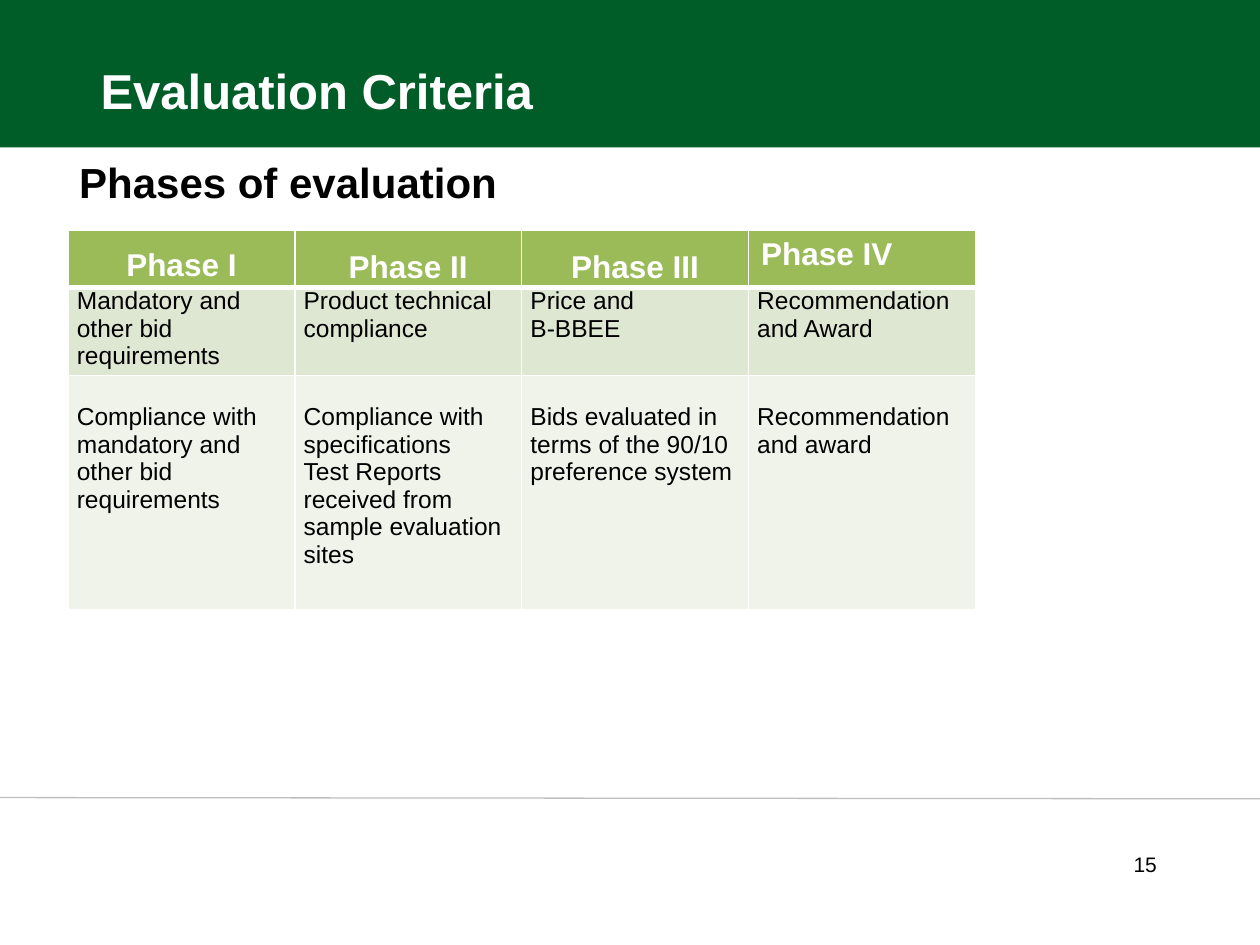
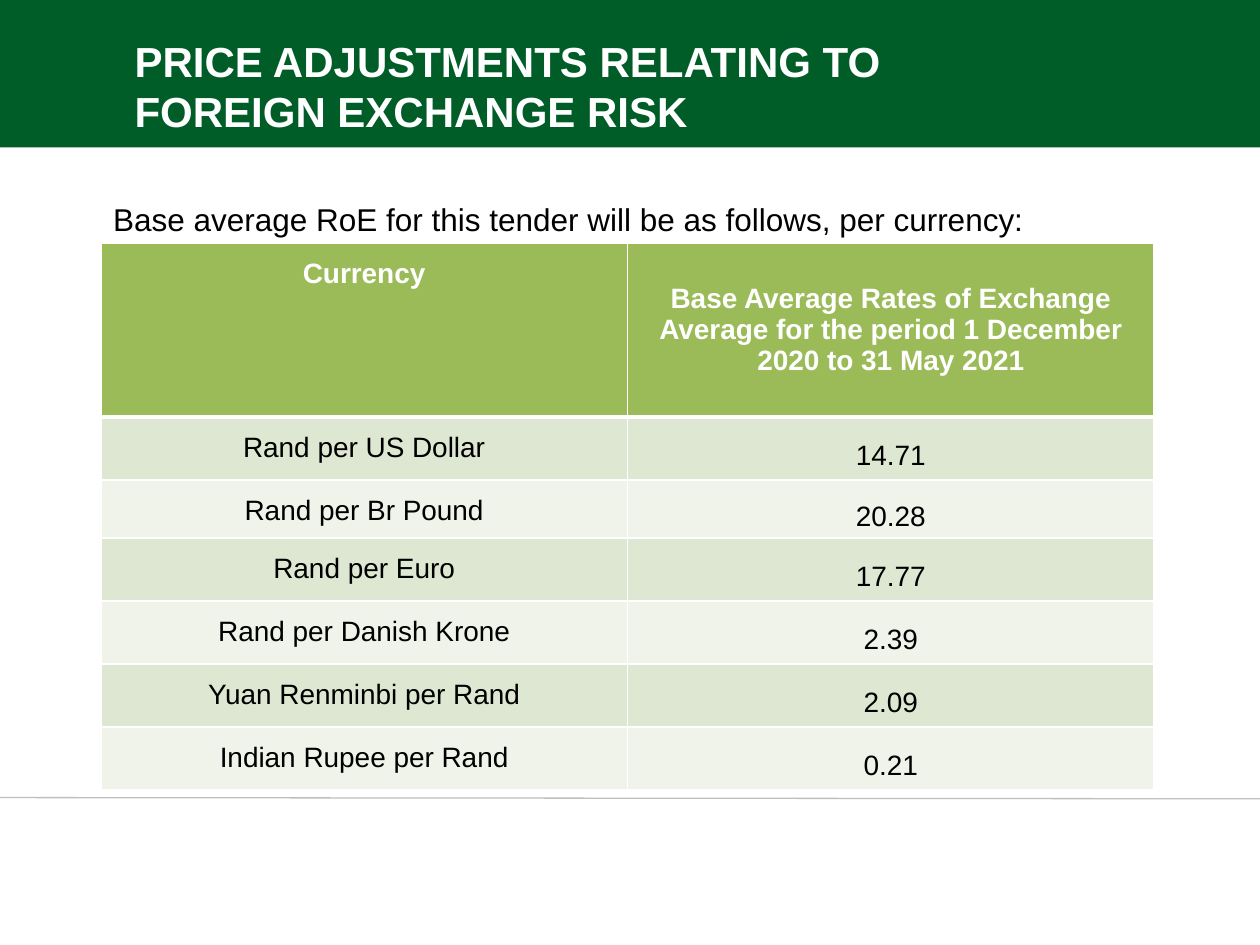
from lxml import etree
from pptx import Presentation
from pptx import util as u
from pptx.dml.color import RGBColor
from pptx.enum import shapes, text
from pptx.oxml import ns

GREEN, HEADER, WHITE, BLACK, GREY = "005D28", "9BBB59", "FFFFFF", "000000", "BFBFBF"
BANDS = ["DEE7D1", "EFF3EA"]
CENTER, RIGHT = text.PP_ALIGN.CENTER, text.PP_ALIGN.RIGHT
MIDDLE, BOTTOM = text.MSO_ANCHOR.MIDDLE, text.MSO_ANCHOR.BOTTOM
THIN, THICK = 1, 3


def color(value):
    return RGBColor.from_string(value)


def write(frame, content, size=18, fill=BLACK, bold=False, align=None,
          anchor=text.MSO_ANCHOR.TOP, spacing=None):
    """Fill a text frame, one paragraph for each line of the content."""
    frame.word_wrap = True
    frame.vertical_anchor = anchor
    for index, line in enumerate(content.split("\n")):
        paragraph = frame.paragraphs[0] if index == 0 else frame.add_paragraph()
        paragraph.alignment = align
        paragraph.line_spacing = spacing
        run = paragraph.add_run()
        run.text = line
        run.font.name = "Arial"
        run.font.size = u.Pt(size)
        run.font.bold = bold
        run.font.color.rgb = color(fill)


class Deck:
    """Holds the shared style and the slide being built."""

    def __init__(self):
        self.presentation = Presentation()
        self.presentation.slide_width = u.Inches(10)
        self.presentation.slide_height = u.Inches(7.5)
        self.slide = None

    def new_slide(self):
        self.slide = self.presentation.slides.add_slide(self.presentation.slide_layouts[6])
        # Title band
        band = self.slide.shapes.add_shape(shapes.MSO_SHAPE.RECTANGLE, 0, 0,
                                           u.Inches(10), u.Inches(1.17))
        band.shadow.inherit = False
        band.fill.solid()
        band.fill.fore_color.rgb = color(GREEN)
        band.line.fill.background()
        # Footer rule
        rule = self.slide.shapes.add_connector(shapes.MSO_CONNECTOR.STRAIGHT, 0, u.Inches(6.33),
                                               u.Inches(10), u.Inches(6.34))
        rule.line.color.rgb = color(GREY)
        rule.line.width = u.Pt(0.75)
        etree.SubElement(rule._element.spPr, ns.qn("a:effectLst"))

    def text_box(self, left, top, width, height, content, **style):
        box = self.slide.shapes.add_textbox(*map(u.Inches, (left, top, width, height)))
        write(box.text_frame, content, **style)

    def title(self, left, top, width, height, content, **style):
        self.text_box(left, top, width, height, content, fill=WHITE, bold=True, **style)

    def table(self, left, top, column_width, row_heights, rows, style_of):
        """style_of(row, column) gives the text format and optional margins of a cell."""
        columns = len(rows[0])
        frame = self.slide.shapes.add_table(
            len(rows), columns, u.Inches(left), u.Inches(top),
            u.Inches(column_width * columns), u.Inches(sum(row_heights)))
        table = frame.table
        table.horz_banding = False
        for column in table.columns:
            column.width = u.Inches(column_width)
        for row, values in enumerate(rows):
            table.rows[row].height = u.Inches(row_heights[row])
            for column, value in enumerate(values):
                self.cell(table.cell(row, column), row, value, **style_of(row, column))

    def cell(self, cell, row, value, side=0.07, upper=0, anchor=text.MSO_ANCHOR.TOP, **style):
        is_header = row == 0
        cell.margin_left = cell.margin_right = u.Inches(side)
        cell.margin_top, cell.margin_bottom = u.Inches(upper), 0
        cell.vertical_anchor = anchor
        self.borders(cell, top=THICK if row == 1 else THIN, bottom=THICK if is_header else THIN)
        cell.fill.solid()
        cell.fill.fore_color.rgb = color(HEADER if is_header else BANDS[(row - 1) % 2])
        write(cell.text_frame, value, fill=WHITE if is_header else BLACK, bold=is_header, **style)
        # The cell carries the anchor, so its text frame needs none
        cell.text_frame.vertical_anchor = None

    def borders(self, cell, top, bottom):
        properties = cell._tc.get_or_add_tcPr()
        for name, width in (("lnL", THIN), ("lnR", THIN), ("lnT", top), ("lnB", bottom)):
            line = etree.SubElement(properties, ns.qn(f"a:{name}"), w=str(u.Pt(width)))
            fill = etree.SubElement(line, ns.qn("a:solidFill"))
            etree.SubElement(fill, ns.qn("a:srgbClr"), val=WHITE)


def phase_style(row, column):
    if row == 0 and column == 3:
        return dict(size=18, side=0.1, upper=0.05)
    if row == 0:
        anchor = MIDDLE if column else text.MSO_ANCHOR.TOP
        return dict(size=18, align=CENTER, spacing=1.5, anchor=anchor)
    return dict(size=14, upper=0.22 if row == 2 else 0)


def rate_style(row, column):
    anchor = MIDDLE if column else text.MSO_ANCHOR.TOP
    spacing = None if (row, column) == (0, 1) else 1.5
    return dict(size=16, align=CENTER, anchor=anchor, spacing=spacing)


def evaluation_slide(deck):
    deck.new_slide()
    deck.title(0.7, 0, 6.08, 1, "Evaluation Criteria", size=28, anchor=BOTTOM)
    deck.text_box(0.53, 1.19, 8.99, 0.91, "Phases of evaluation", size=24, bold=True)
    phases = [
        ["Phase I", "Phase II", "Phase III", "Phase IV"],
        ["Mandatory and other bid requirements", "Product technical compliance",
         "Price and\nB-BBEE", "Recommendation and Award"],
        ["Compliance with mandatory and other bid requirements",
         "Compliance with specifications\nTest Reports received from sample evaluation sites",
         "Bids evaluated in terms of the 90/10 preference system",
         "Recommendation and award"],
    ]
    deck.table(0.54, 1.83, 1.8, [0.44, 0.7, 1.86], phases, phase_style)
    deck.text_box(4.08, 6.71, 5.2, 0.79, "15", size=12, align=RIGHT)


def exchange_slide(deck):
    deck.new_slide()
    deck.title(0.97, 0.23, 7, 0.91, "PRICE ADJUSTMENTS RELATING TO FOREIGN EXCHANGE RISK", size=24)
    deck.text_box(0.8, 1.54, 8.36, 1.18,
                  "Base average RoE for this tender will be as follows, per currency:")
    rates = [
        ["Currency", "Base Average Rates of Exchange\n"
                     "Average for the period 1 December 2020 to 31 May 2021"],
        ["Rand per US Dollar", "14.71"],
        ["Rand per Br Pound", "20.28"],
        ["Rand per Euro", "17.77"],
        ["Rand per Danish Krone", "2.39"],
        ["Yuan Renminbi per Rand", "2.09"],
        ["Indian Rupee per Rand", "0.21"],
    ]
    deck.table(0.8, 1.93, 4.18, [1.38, 0.5, 0.46] + [0.5] * 4, rates, rate_style)


def main():
    deck = Deck()
    evaluation_slide(deck)
    exchange_slide(deck)
    deck.presentation.save("out.pptx")


if __name__ == "__main__":
    main()
